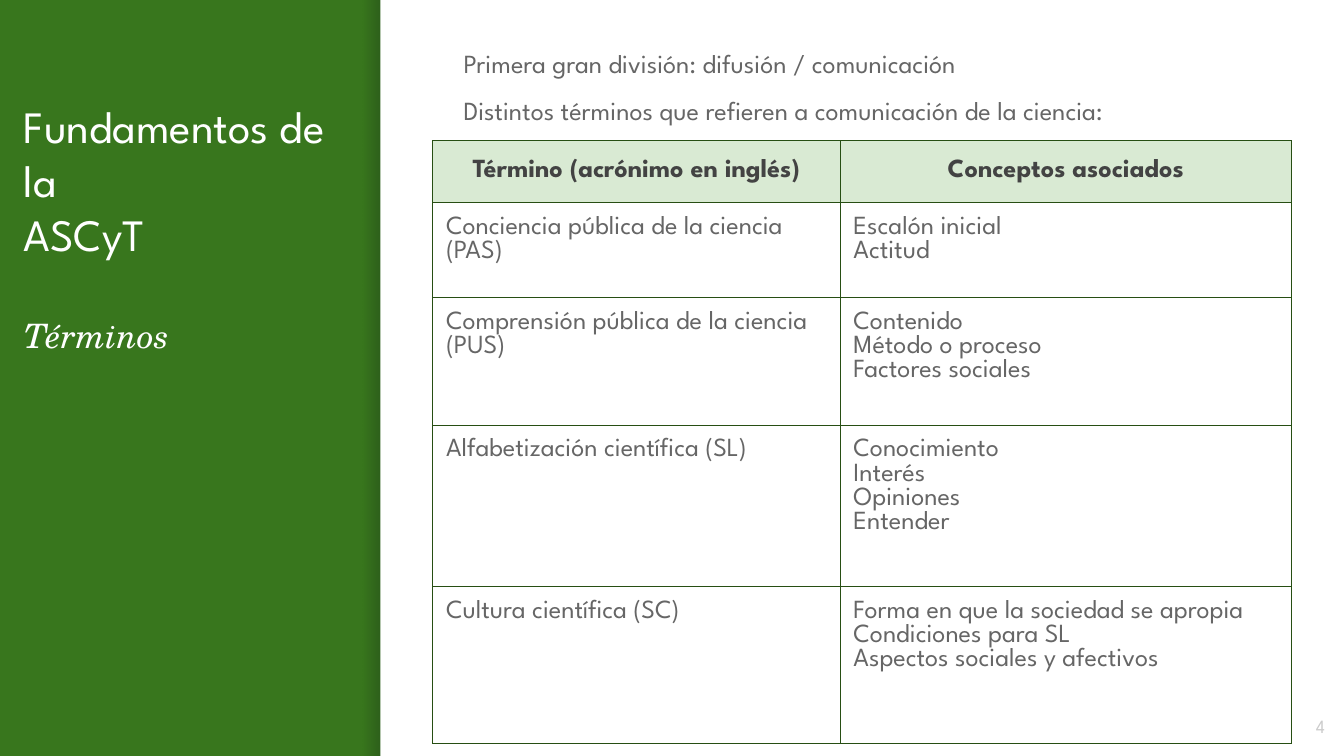
from lxml.etree import SubElement
from pptx import Presentation
from pptx.dml.color import RGBColor
from pptx.enum.shapes import MSO_SHAPE as Shape
from pptx.enum.text import MSO_ANCHOR as Anchor, MSO_AUTO_SIZE as AutoSize, PP_ALIGN as Align
from pptx.oxml.ns import qn
from pptx.util import Cm, Pt

SANS, SERIF = "League Spartan", "TeX Gyre Schola"
GREEN = RGBColor(0x38, 0x76, 0x1D)
DARK_GREEN = RGBColor(0x27, 0x4E, 0x13)
PALE_GREEN = RGBColor(0xD9, 0xEA, 0xD3)
WHITE = RGBColor(0xFF, 0xFF, 0xFF)
SHADE = RGBColor(0x00, 0x00, 0x14)
HEADING = RGBColor(0x43, 0x43, 0x43)
GREY = RGBColor(0x66, 0x66, 0x66)
PALE_GREY = RGBColor(0xCC, 0xCC, 0xCC)

TITLE = ["Fundamentos de la", "ASCyT"]
SUBTITLE = "Términos"
INTRO = [
    "Primera gran división: difusión / comunicación",
    "Distintos términos que refieren a comunicación de la ciencia:",
]
HEADERS = ["Término (acrónimo en inglés)", "Conceptos asociados"]
TERMS = [
    ("Conciencia pública de la ciencia (PAS)", ["Escalón inicial", "Actitud"]),
    ("Comprensión pública de la ciencia (PUS)",
     ["Contenido", "Método o proceso", "Factores sociales"]),
    ("Alfabetización científica (SL)",
     ["Conocimiento", "Interés", "Opiniones", "Entender"]),
    ("Cultura científica (SC)",
     ["Forma en que la sociedad se apropia", "Condiciones para SL",
      "Aspectos sociales y afectivos"]),
]
PAGE = "4"

WIDTH, HEIGHT = 25.4, 14.29
PANEL_LEFT = 7.19
SHADE_LEFT = 6.86
COLUMNS = [7.7, 8.53]
ROWS = [1.17, 1.8, 2.41, 3.05, 2.97]
INSET = Cm(0.25)


def place(shape, left, top, width, height):
    shape.left, shape.top = Cm(left), Cm(top)
    shape.width, shape.height = Cm(width), Cm(height)


def set_frame(frame, anchor):
    frame.word_wrap = True
    frame.auto_size = AutoSize.NONE
    frame.vertical_anchor = anchor
    frame.margin_left = frame.margin_right = INSET
    frame.margin_top = frame.margin_bottom = INSET


def write(frame, lines, size, color, align=Align.LEFT, bold=False):
    frame.text = "\n".join(lines)
    for paragraph in frame.paragraphs:
        paragraph.alignment = align
        paragraph.space_before = Pt(0)
        font = paragraph.font
        font.name, font.size, font.bold = SANS, Pt(size), bold
        font.color.rgb = color


def add_backdrop(slide, left, width):
    """Add a full-height rectangle behind the placeholders."""
    backdrop = slide.shapes.add_shape(
        Shape.RECTANGLE, Cm(left), 0, Cm(width), Cm(HEIGHT))
    backdrop.shadow.inherit = False
    backdrop.line.fill.background()
    slide.shapes._spTree.insert(2, backdrop._element)
    return backdrop


def add_edge_shade(slide):
    shade = add_backdrop(slide, SHADE_LEFT, PANEL_LEFT - SHADE_LEFT)
    shade.fill.gradient()
    shade.fill.gradient_angle = 0
    for stop, opacity in zip(shade.fill.gradient_stops, (0, 20)):
        stop.color.rgb = SHADE
        stop.position = 0 if opacity == 0 else 1
    colors = shade._element.spPr.iter(qn("a:srgbClr"))
    for color, opacity in zip(list(colors), (0, 20)):
        SubElement(color, qn("a:alpha"), val=str(opacity * 1000))


def set_borders(cell):
    properties = cell._tc.get_or_add_tcPr()
    for position, side in enumerate(("lnL", "lnR", "lnT", "lnB")):
        line = SubElement(properties, qn(f"a:{side}"), w=str(Pt(0.75)))
        fill = SubElement(line, qn("a:solidFill"))
        SubElement(fill, qn("a:srgbClr"), val=str(DARK_GREEN))
        properties.insert(position, line)


def add_terms_table(slide):
    table = slide.shapes.add_table(
        len(ROWS), len(COLUMNS), Cm(8.18), Cm(2.66),
        Cm(sum(COLUMNS)), Cm(sum(ROWS))).table
    table.first_row = table.horz_banding = False
    for column, width in zip(table.columns, COLUMNS):
        column.width = Cm(width)
    for row, height in zip(table.rows, ROWS):
        row.height = Cm(height)

    contents = [[[header] for header in HEADERS]]
    contents += [[[term], concepts] for term, concepts in TERMS]
    for r, row in enumerate(contents):
        for c, lines in enumerate(row):
            cell = table.cell(r, c)
            cell.margin_left = cell.margin_right = INSET
            cell.margin_top = cell.margin_bottom = INSET
            if r == 0:
                cell.vertical_anchor = Anchor.MIDDLE
                cell.fill.solid()
                cell.fill.fore_color.rgb = PALE_GREEN
                write(cell.text_frame, lines, 14, HEADING, Align.CENTER, True)
            else:
                cell.vertical_anchor = Anchor.TOP
                cell.fill.background()
                write(cell.text_frame, lines, 14, GREY)
            set_borders(cell)


def main():
    prs = Presentation()
    prs.slide_width, prs.slide_height = Cm(WIDTH), Cm(HEIGHT)
    slide = prs.slides.add_slide(prs.slide_layouts[1])
    slide.background.fill.solid()
    slide.background.fill.fore_color.rgb = GREEN

    panel = add_backdrop(slide, PANEL_LEFT, WIDTH - PANEL_LEFT)
    panel.fill.solid()
    panel.fill.fore_color.rgb = WHITE
    add_edge_shade(slide)

    title = slide.shapes.title
    place(title, 0.2, 1.6, 6.7, 11.05)
    set_frame(title.text_frame, Anchor.TOP)
    write(title.text_frame, TITLE + [SUBTITLE], 24, WHITE)
    for paragraph in title.text_frame.paragraphs:
        paragraph.line_spacing = Pt(29)
    subtitle = title.text_frame.paragraphs[-1]
    subtitle.line_spacing, subtitle.space_before = Pt(22), Pt(29)
    subtitle.font.name, subtitle.font.size = SERIF, Pt(18)
    subtitle.font.italic = True

    intro = slide.placeholders[1]
    place(intro, 8.51, 0.56, 15.54, 2.11)
    set_frame(intro.text_frame, Anchor.TOP)
    write(intro.text_frame, INTRO, 14, GREY)
    for paragraph in intro.text_frame.paragraphs:
        paragraph.line_spacing = Pt(19.2)
        properties = paragraph._p.get_or_add_pPr()
        properties.set("marL", "0")
        properties.set("indent", "0")
        SubElement(properties, qn("a:buNone"))
        # Bullet settings come before the default run properties.
        properties.append(properties.find(qn("a:defRPr")))
    intro.text_frame.paragraphs[-1].space_before = Pt(6)

    add_terms_table(slide)

    page = slide.shapes.add_textbox(Cm(23.77), Cm(13.18), Cm(1.52), Cm(1.09))
    set_frame(page.text_frame, Anchor.MIDDLE)
    write(page.text_frame, [PAGE], 10, PALE_GREY, Align.RIGHT)

    prs.save("out.pptx")


if __name__ == "__main__":
    main()
